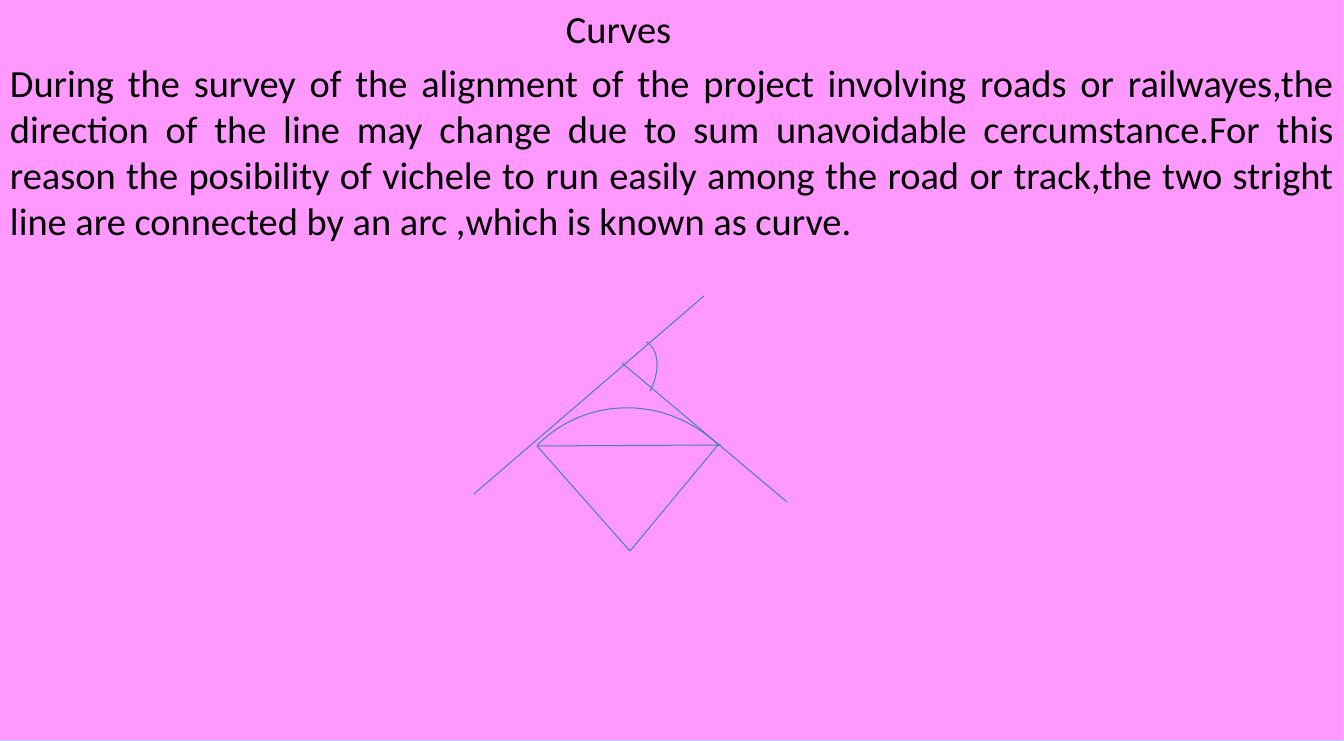
from lxml import etree
from pptx import Presentation
from pptx.dml.color import RGBColor
from pptx.enum.shapes import MSO_CONNECTOR, MSO_SHAPE
from pptx.enum.text import MSO_ANCHOR, PP_ALIGN
from pptx.oxml.ns import qn
from pptx.util import Pt

ARC = MSO_SHAPE.ARC
RECTANGLE = MSO_SHAPE.RECTANGLE
STRAIGHT = MSO_CONNECTOR.STRAIGHT
TOP = MSO_ANCHOR.TOP
JUSTIFY = PP_ALIGN.JUSTIFY

PINK = RGBColor(0xFF, 0x99, 0xFF)
PALE_BLUE = RGBColor(0xC2, 0xD1, 0xED)
BLUE = RGBColor(0x4B, 0x7E, 0xBC)
BLACK = RGBColor(0, 0, 0)

EMU_PER_PX = 9255
PAGE_WIDTH, PAGE_HEIGHT = 1344, 741
TITLE_INDENT = 556

TITLE = "Curves"
BODY = (
    "During the survey of the alignment of the project involving roads or "
    "railwayes,the direction of the line may change due to sum unavoidable "
    "cercumstance.For this reason the posibility of vichele to run easily "
    "among the road or track,the two stright line are connected by an arc "
    ",which is known as curve."
)


def px(length):
    return length * EMU_PER_PX


def set_line(shape, color):
    shape.line.color.rgb = color
    shape.line.width = Pt(0.75)


def add_text_panel(page, box):
    panel = page.shapes.add_shape(RECTANGLE, *map(px, box))
    panel.shadow.inherit = False
    panel.fill.solid()
    panel.fill.fore_color.rgb = PINK
    set_line(panel, PALE_BLUE)
    frame = panel.text_frame
    frame.word_wrap = True
    frame.vertical_anchor = TOP
    frame.margin_left = frame.margin_right = px(10)
    frame.margin_top = frame.margin_bottom = px(5)
    frame.text = f"{TITLE}\n{BODY}"
    for para in frame.paragraphs:
        para.alignment = JUSTIFY
        para.space_before = Pt(5.6)
        for span in para.runs:
            span.font.name = "Calibri"
            span.font.size = Pt(28)
            span.font.color.rgb = BLACK
    title_format = frame.paragraphs[0]._p.get_or_add_pPr()
    title_format.set("marL", str(px(TITLE_INDENT)))


def add_curve_diagram(page, left, top):
    curve_start = (63, 150)
    curve_end = (244, 149)
    curve_center = (156, 255)
    lines = [
        (curve_start, curve_center),
        (curve_center, curve_end),
        ((0, 198), (230, 0)),
        ((148, 67), (313, 206)),
        (curve_start, (247, 149)),
    ]
    for (x1, y1), (x2, y2) in lines:
        line = page.shapes.add_connector(
            STRAIGHT, px(left + x1), px(top + y1), px(left + x2), px(top + y2)
        )
        set_line(line, BLUE)
        etree.SubElement(line._element.spPr, qn("a:effectLst"))

    arcs = [(30, 110, 253, 260, 314.1), (126, 41, 53, 84, 27.8)]
    for x, y, width, height, rotation in arcs:
        arc = page.shapes.add_shape(
            ARC, px(left + x), px(top + y), px(width), px(height)
        )
        arc.rotation = rotation
        arc.shadow.inherit = False
        arc.fill.background()
        set_line(arc, BLUE)


def main():
    deck = Presentation()
    deck.slide_width = px(PAGE_WIDTH)
    deck.slide_height = px(PAGE_HEIGHT)
    page = deck.slides.add_slide(deck.slide_layouts[6])
    add_text_panel(page, (0, 0, PAGE_WIDTH, PAGE_HEIGHT))
    add_curve_diagram(page, 474, 296)
    deck.save("out.pptx")


if __name__ == "__main__":
    main()
